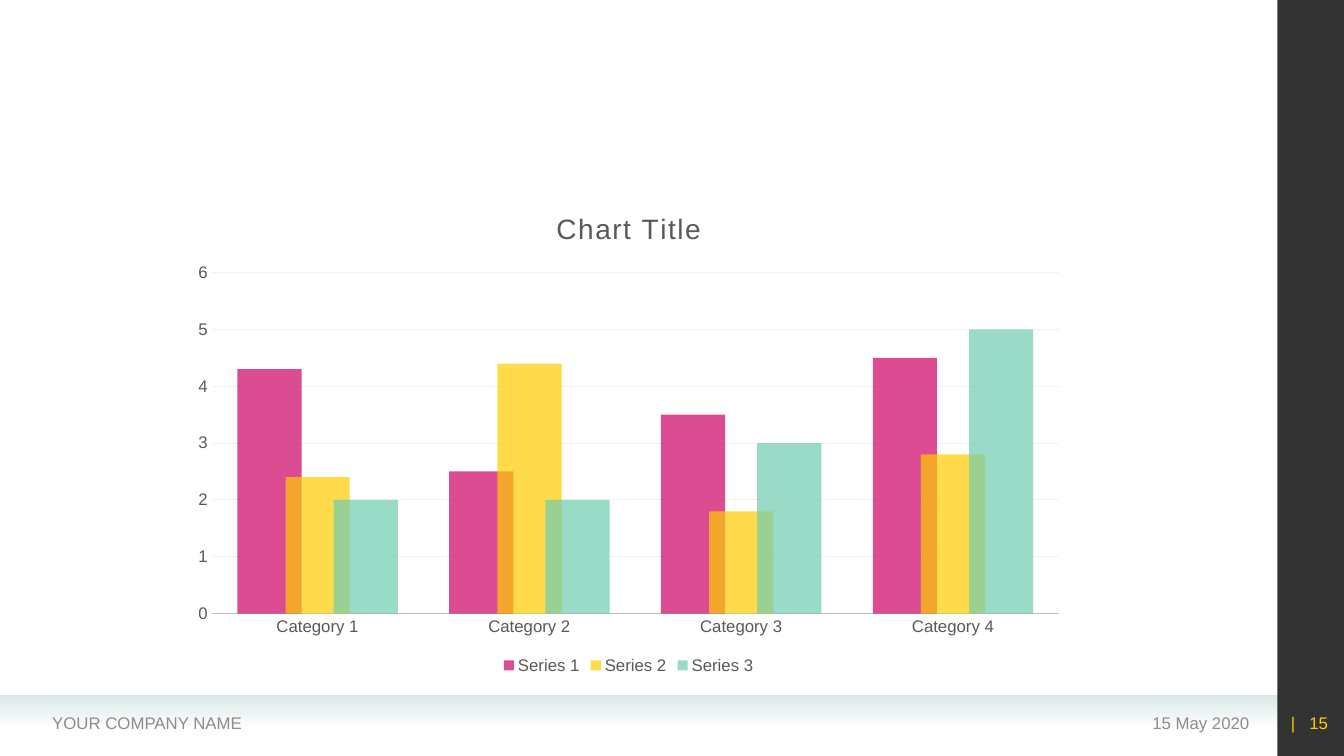
from dataclasses import dataclass

from pptx import Presentation
from pptx.chart.data import CategoryChartData
from pptx.dml.color import RGBColor as RGB
from pptx.enum.chart import XL_CHART_TYPE as Kind, XL_LEGEND_POSITION as Place
from pptx.enum.chart import XL_TICK_MARK as Tick
from pptx.enum.shapes import MSO_SHAPE as Form
from pptx.enum.text import MSO_ANCHOR as Anchor, PP_ALIGN as Align
from pptx.oxml.ns import qn
from pptx.util import Inches, Pt


@dataclass(frozen=True)
class Theme:
    font: str = "Arial"
    small: int = 12
    large: int = 20
    mist: str = "D9E9E8"
    black: str = "000000"
    grey: str = "8C8C8C"
    ink: str = "595959"
    axis: str = "BFBFBF"
    grid: str = "F2F2F2"
    gold: str = "FFCC00"
    bars: tuple = ("CC0066", "FFCC00", "70CCB1")


THEME = Theme()
CATS = [f"Category {n}" for n in range(1, 5)]
DATA = {
    "Series 1": (4.3, 2.5, 3.5, 4.5),
    "Series 2": (2.4, 4.4, 1.8, 2.8),
    "Series 3": (2, 2, 3, 5),
}


def fade(color, share):
    """Set the opacity, in percent, of a colour element."""
    alpha = color.makeelement(qn("a:alpha"), {"val": str(share * 1000)})
    color.append(alpha)


def style(font, color=THEME.ink, size=THEME.small):
    font.name = THEME.font
    font.size = Pt(size)
    font.bold = False
    font.color.rgb = RGB.from_string(color)


def add_rect(slide, box):
    rect = slide.shapes.add_shape(Form.RECTANGLE, *map(Inches, box))
    rect.shadow.inherit = False
    rect.line.fill.background()
    return rect


def add_band(slide, box):
    """Add a strip that fades out downwards."""
    band = add_rect(slide, box)
    band.fill.gradient()
    band.fill.gradient_angle = 270
    for stop, place in zip(band.fill.gradient_stops, (0, 1)):
        stop.position = place
        stop.color.rgb = RGB.from_string(THEME.mist)
    first, last = band._element.spPr.iter(qn("a:srgbClr"))
    fade(last, 0)


def add_side(slide, box):
    side = add_rect(slide, box)
    side.fill.solid()
    side.fill.fore_color.rgb = RGB.from_string(THEME.black)
    fade(next(side._element.spPr.iter(qn("a:srgbClr"))), 80)


def add_text(slide, text, box, color=THEME.grey, align=Align.LEFT):
    frame = slide.shapes.add_textbox(*map(Inches, box)).text_frame
    frame.word_wrap = True
    frame.vertical_anchor = Anchor.MIDDLE
    para = frame.paragraphs[0]
    para.alignment = align
    run = para.add_run()
    run.text = text
    style(run.font, color)


def style_axes(chart):
    for axis in (chart.category_axis, chart.value_axis):
        axis.major_tick_mark = axis.minor_tick_mark = Tick.NONE
        style(axis.tick_labels.font)
    line = chart.category_axis.format.line
    line.color.rgb = RGB.from_string(THEME.axis)
    line.width = Pt(1.25)
    scale = chart.value_axis
    scale.minimum_scale, scale.maximum_scale, scale.major_unit = 0, 6, 1
    scale.format.line.fill.background()
    grid = scale.major_gridlines.format.line
    grid.color.rgb = RGB.from_string(THEME.grid)
    grid.width = Pt(0.75)


def style_title(chart, text):
    frame = chart.chart_title.text_frame
    run = frame.paragraphs[0].add_run()
    run.text = text
    style(run.font, size=THEME.large)
    run._r.get_or_add_rPr().set("spc", "100")


def add_bars(slide, box):
    data = CategoryChartData()
    data.categories = CATS
    for name, vals in DATA.items():
        data.add_series(name, vals)
    frame = slide.shapes.add_chart(Kind.COLUMN_CLUSTERED, *map(Inches, box), data)
    chart = frame.chart
    style(chart.font)
    style_title(chart, "Chart Title")
    style_axes(chart)
    chart.has_legend = True
    chart.legend.position = Place.BOTTOM
    chart.legend.include_in_layout = False
    style(chart.legend.font)
    plot = chart.plots[0]
    plot.vary_by_categories = False
    plot.gap_width, plot.overlap = 80, 25
    for series, color in zip(plot.series, THEME.bars):
        fill = series.format.fill
        fill.solid()
        fill.fore_color.rgb = RGB.from_string(color)
        fade(next(series._element.iter(qn("a:srgbClr"))), 70)


def main():
    deck = Presentation()
    deck.slide_width, deck.slide_height = Inches(13.33), Inches(7.5)
    slide = deck.slides.add_slide(deck.slide_layouts[6])
    add_band(slide, (0, 6.9, 12.67, 0.31))
    add_side(slide, (12.67, 0, 0.67, 7.5))
    add_text(slide, "15 May 2020", (9.1, 6.97, 3.39, 0.4), align=Align.RIGHT)
    add_text(slide, "YOUR COMPANY NAME", (0.42, 6.97, 4.9, 0.4))
    add_text(slide, "|   15", (12.6, 6.97, 0.67, 0.4), THEME.gold, Align.RIGHT)
    add_bars(slide, (1.79, 1.89, 8.89, 4.84))
    deck.save("out.pptx")


if __name__ == "__main__":
    main()
